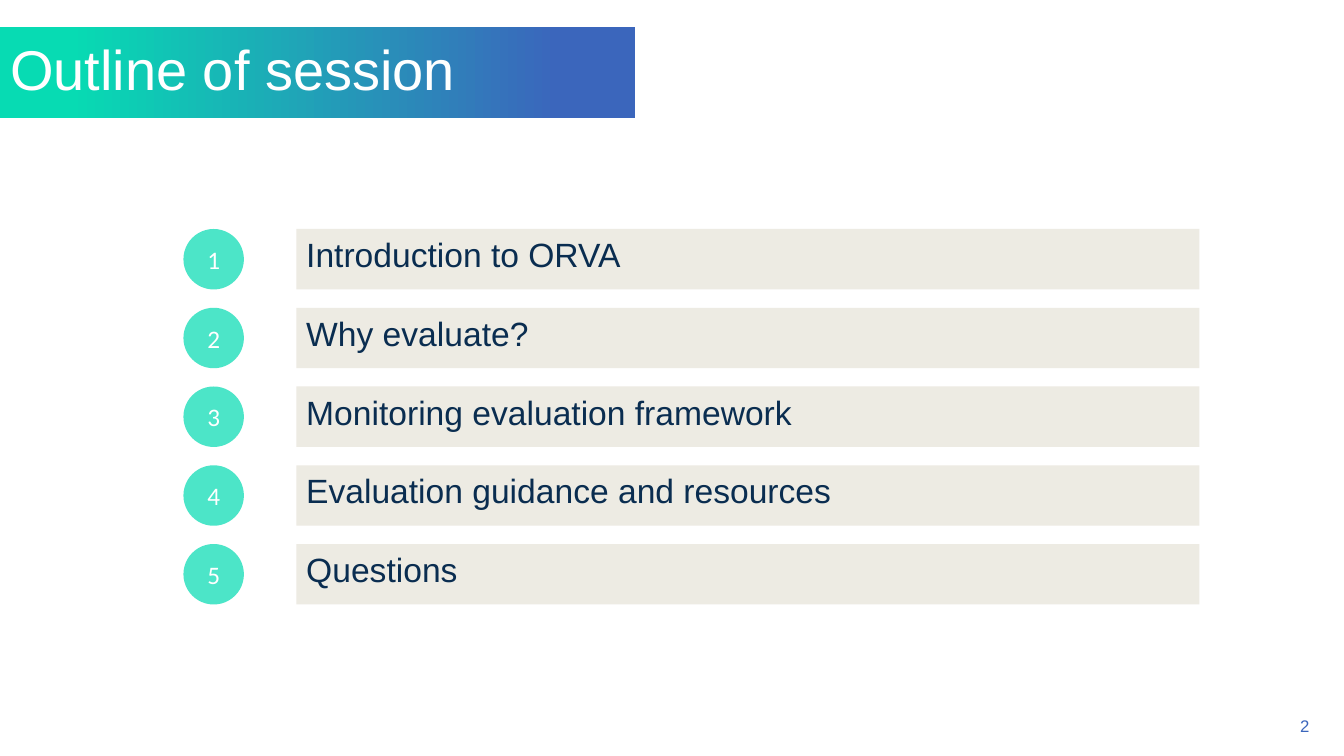
from copy import deepcopy

from lxml import etree
from pptx import Presentation
from pptx.dml.color import RGBColor
from pptx.enum import shapes, text
from pptx.oxml import ns
from pptx.util import Pt

WHITE, NAVY, BLUE = "FFFFFF", "0A2D50", "3B66BC"
GREEN, BEIGE = "07DBB3", "EDEBE3"
TITLE_STOPS = [(0, BLUE), (0.12, BLUE), (0.89, GREEN), (1, GREEN)]
TOPICS = [
    "Introduction to ORVA",
    "Why evaluate?",
    "Monitoring evaluation framework",
    "Evaluation guidance and resources",
    "Questions",
]


def color(value):
    return RGBColor.from_string(value)


def write(shape, words, size, fill, font="Arial", align=text.PP_ALIGN.LEFT,
          anchor=text.MSO_ANCHOR.TOP, line_spacing=None):
    frame = shape.text_frame
    frame.word_wrap = True
    frame.auto_size = text.MSO_AUTO_SIZE.NONE
    frame.vertical_anchor = anchor
    frame.margin_left = frame.margin_right = Pt(7.2)
    frame.margin_top = frame.margin_bottom = Pt(3.6)
    paragraph = frame.paragraphs[0]
    paragraph.alignment = align
    paragraph.line_spacing = line_spacing
    run = paragraph.add_run()
    run.text = words
    run.font.name = font
    run.font.size = Pt(size)
    run.font.color.rgb = color(fill)


def add_block(slide, kind, box, fill, opacity=100):
    shape = slide.shapes.add_shape(kind, *map(Pt, box))
    shape.shadow.inherit = False
    shape.fill.solid()
    shape.fill.fore_color.rgb = color(fill)
    shape.line.fill.background()
    if opacity < 100:
        tint = shape._element.spPr.find(".//" + ns.qn("a:srgbClr"))
        etree.SubElement(tint, ns.qn("a:alpha"), val=str(opacity * 1000))
    return shape


def add_title(slide, box, words):
    title = slide.shapes.title
    title.left, title.top, title.width, title.height = map(Pt, box)
    title.fill.gradient()
    title.fill.gradient_angle = 180
    stop_list = title._element.spPr.find(".//" + ns.qn("a:gsLst"))
    for stop in list(stop_list):
        stop_list.append(deepcopy(stop))
    for stop, (position, fill) in zip(title.fill.gradient_stops, TITLE_STOPS):
        stop.position = position
        stop.color.rgb = color(fill)
    write(title, words, 40, WHITE, anchor=text.MSO_ANCHOR.MIDDLE, line_spacing=0.9)


def add_agenda(slide, box, topics):
    left, top, width, height = box
    row_height, bar_offset = 43.2, 80.64
    pitch = (height - row_height) / (len(topics) - 1)
    for index, topic in enumerate(topics):
        row_top = top + index * pitch
        badge = add_block(slide, shapes.MSO_SHAPE.OVAL,
                          (left, row_top, row_height, row_height), GREEN, opacity=72)
        write(badge, str(index + 1), 18, WHITE, font="Calibri",
              align=text.PP_ALIGN.CENTER, anchor=text.MSO_ANCHOR.MIDDLE)
        bar = add_block(slide, shapes.MSO_SHAPE.RECTANGLE,
                        (left + bar_offset, row_top, width - bar_offset, row_height), BEIGE)
        write(bar, topic, 24, NAVY)


def add_page_number(slide, box, number):
    label = slide.shapes.add_textbox(*map(Pt, box))
    write(label, str(number), 12, BLUE, align=text.PP_ALIGN.RIGHT,
          anchor=text.MSO_ANCHOR.BOTTOM)


def main():
    presentation = Presentation()
    presentation.slide_width, presentation.slide_height = Pt(960), Pt(540)
    slide = presentation.slides.add_slide(presentation.slide_layouts[5])
    add_title(slide, (0, 19.44, 453.6, 64.8), "Outline of session")
    add_page_number(slide, (726.48, 511.2, 216, 18), 2)
    add_agenda(slide, (131.04, 163.6, 725.76, 268.2), TOPICS)
    presentation.save("out.pptx")


if __name__ == "__main__":
    main()
